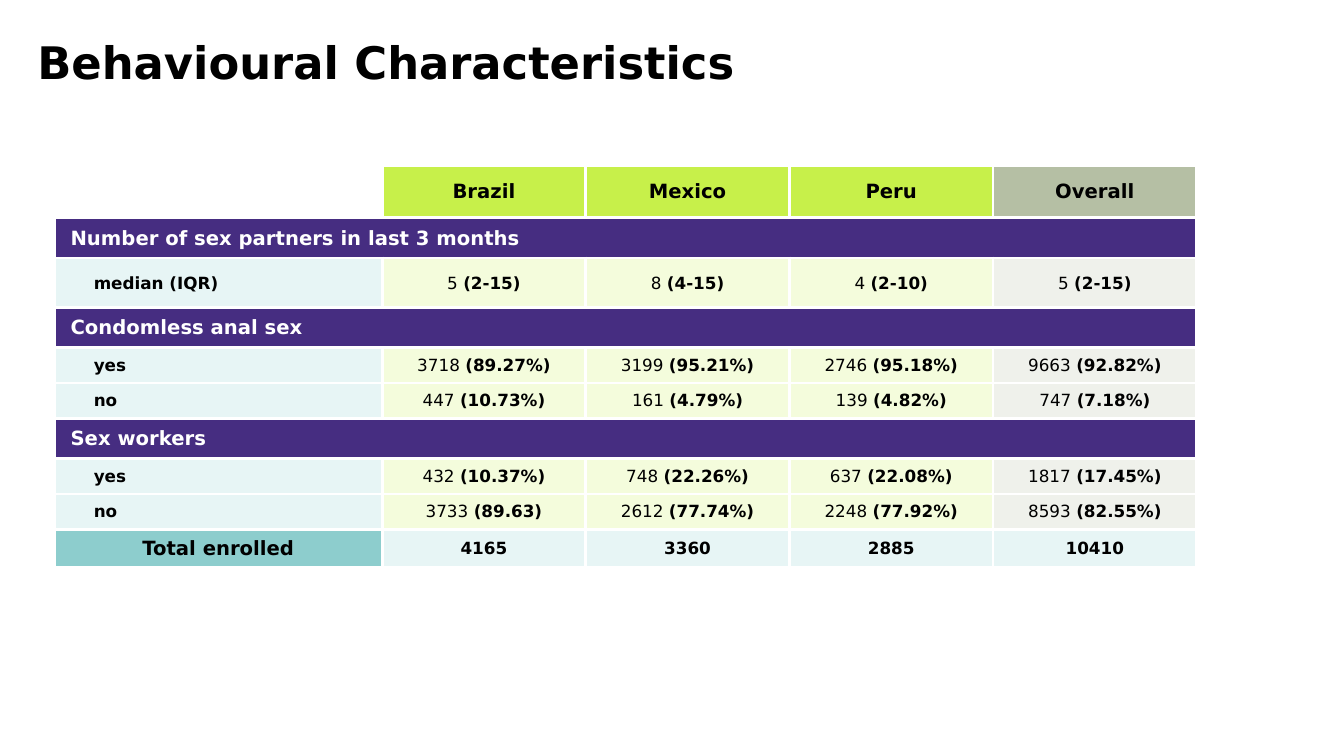
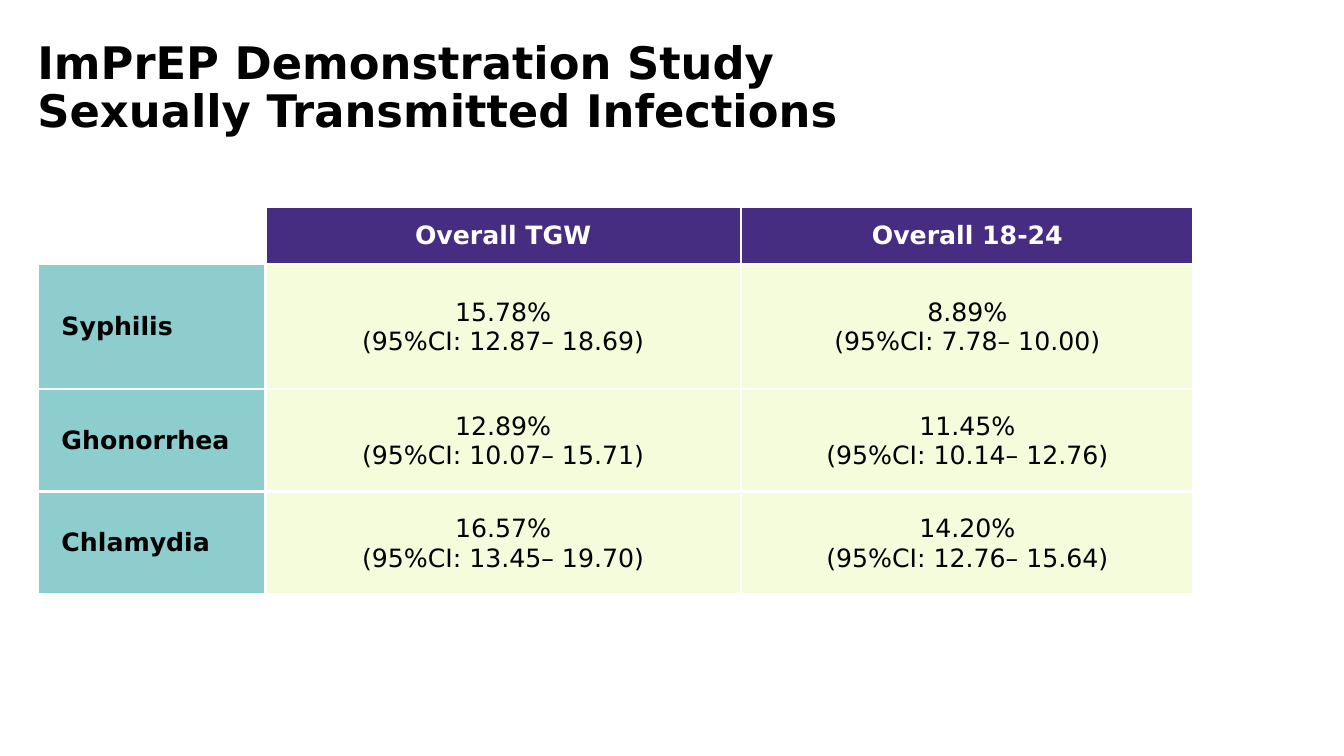
from pptx import Presentation
from pptx.dml.color import RGBColor
from pptx.enum.text import MSO_ANCHOR as Anchor, MSO_AUTO_SIZE as AutoSize, PP_ALIGN as Align
from pptx.oxml import parse_xml
from pptx.oxml.ns import nsdecls
from pptx.util import Inches, Pt

FONT = "DejaVu Sans"
BLACK = RGBColor(0x00, 0x00, 0x00)
WHITE = RGBColor(0xFF, 0xFF, 0xFF)
PURPLE = RGBColor(0x46, 0x2D, 0x81)
LIME = RGBColor(0xC7, 0xF0, 0x4A)
SAGE = RGBColor(0xB5, 0xBF, 0xA4)
TEAL = RGBColor(0x8D, 0xCD, 0xCD)
PALE_TEAL = RGBColor(0xE7, 0xF5, 0xF5)
PALE_LIME = RGBColor(0xF4, 0xFC, 0xDC)
PALE_SAGE = RGBColor(0xEF, 0xF1, 0xEB)

TIGHT = (0.01, 0.01, 0.01, 0)
ROOMY = (0.1, 0.05, 0.1, 0.05)
TITLE_ONLY = 5

COUNTRIES = ["Brazil", "Mexico", "Peru", "Overall"]
BEHAVIOURS = [
    (0.4, "Number of sex partners in last 3 months", []),
    (0.49, "median (IQR)", ["5 (2-15)", "8 (4-15)", "4 (2-10)", "5 (2-15)"]),
    (0.4, "Condomless anal sex", []),
    (0.35, "yes", ["3718 (89.27%)", "3199 (95.21%)", "2746 (95.18%)", "9663 (92.82%)"]),
    (0.35, "no", ["447 (10.73%)", "161 (4.79%)", "139 (4.82%)", "747 (7.18%)"]),
    (0.4, "Sex workers", []),
    (0.35, "yes", ["432 (10.37%)", "748 (22.26%)", "637 (22.08%)", "1817 (17.45%)"]),
    (0.35, "no", ["3733 (89.63)", "2612 (77.74%)", "2248 (77.92%)", "8593 (82.55%)"]),
]
TOTALS = ["4165", "3360", "2885", "10410"]

GROUPS = ["Overall TGW", "Overall 18-24"]
INFECTIONS = [
    (1.24, "Syphilis", [("15.78%", "12.87– 18.69"), ("8.89%", "7.78– 10.00")]),
    (1.02, "Ghonorrhea", [("12.89%", "10.07– 15.71"), ("11.45%", "10.14– 12.76")]),
    (1.02, "Chlamydia", [("16.57%", "13.45– 19.70"), ("14.20%", "12.76– 15.64")]),
]


def add_span(para, text, size=12, color=BLACK, bold=True):
    span = para.add_run()
    span.text = text
    span.font.name = FONT
    span.font.size = Pt(size)
    span.font.color.rgb = color
    span.font.bold = bold


class Deck:
    def __init__(self):
        self.deck = Presentation()
        self.deck.slide_width = Inches(13.33)
        self.deck.slide_height = Inches(7.5)
        self.page = None

    def add_page(self, *title_lines):
        self.page = self.deck.slides.add_slide(self.deck.slide_layouts[TITLE_ONLY])
        title = self.page.shapes.title
        title.left, title.top = Inches(0.37), Inches(0.4)
        title.width, title.height = Inches(11.13), Inches(0.92)
        frame = title.text_frame
        frame.margin_left = frame.margin_top = frame.margin_right = frame.margin_bottom = 0
        frame.vertical_anchor = Anchor.TOP
        frame.auto_size = AutoSize.NONE
        frame.word_wrap = True
        para = frame.paragraphs[0]
        para.alignment = Align.LEFT
        para.line_spacing = 0.9
        for number, line in enumerate(title_lines):
            if number:
                para.add_line_break()
            add_span(para, line, size=32)

    def add_table(self, left, top, widths, heights):
        frame = self.page.shapes.add_table(
            len(heights), len(widths), Inches(left), Inches(top),
            Inches(sum(widths)), Inches(sum(heights)))
        table = frame.table
        table.first_row = table.horz_banding = False
        for column, width in zip(table.columns, widths):
            column.width = Inches(width)
        for row, height in zip(table.rows, heights):
            row.height = Inches(height)
        for cell in table.iter_cells():
            self.add_borders(cell)
            cell.fill.background()
        return table

    def add_borders(self, cell):
        properties = cell._tc.get_or_add_tcPr()
        for side in ("lnL", "lnR", "lnT", "lnB"):
            properties.append(parse_xml(
                f'<a:{side} {nsdecls("a")} w="{Pt(2.25)}"><a:solidFill>'
                f'<a:srgbClr val="{WHITE}"/></a:solidFill></a:{side}>'))

    def fill_cell(self, cell, lines, fill, margins=TIGHT, align=Align.CENTER, **style):
        cell.fill.solid()
        cell.fill.fore_color.rgb = fill
        cell.vertical_anchor = Anchor.MIDDLE
        (cell.margin_left, cell.margin_top,
         cell.margin_right, cell.margin_bottom) = map(Inches, margins)
        frame = cell.text_frame
        for number, line in enumerate(lines):
            para = frame.add_paragraph() if number else frame.paragraphs[0]
            para.alignment = align
            add_span(para, line, **style)

    def fill_count(self, cell, text, fill):
        count, share = text.split(" ")
        self.fill_cell(cell, [count + " "], fill, bold=False)
        add_span(cell.text_frame.paragraphs[0], share)

    def save(self):
        self.deck.save("out.pptx")


def add_behaviour_page(deck):
    deck.add_page("Behavioural Characteristics")
    heights = [0.52] + [height for height, _, _ in BEHAVIOURS] + [0.38]
    table = deck.add_table(0.54, 1.64, [3.25] + [2.02] * 4, heights)
    head_fills = [LIME] * 3 + [SAGE]
    count_fills = [PALE_LIME] * 3 + [PALE_SAGE]
    for column, (country, fill) in enumerate(zip(COUNTRIES, head_fills), 1):
        deck.fill_cell(table.cell(0, column), [country], fill, (0.1, 0.12, 0.1, 0.12), size=14)
    for row, (_, label, counts) in enumerate(BEHAVIOURS, 1):
        head = table.cell(row, 0)
        if counts:
            deck.fill_cell(head, [label], PALE_TEAL, (0.39, 0.01, 0.01, 0), Align.LEFT)
        else:
            head.merge(table.cell(row, len(COUNTRIES)))
            deck.fill_cell(head, [label], PURPLE, (0.16, 0.01, 0.01, 0), Align.LEFT,
                           size=14, color=WHITE)
        for column, (count, fill) in enumerate(zip(counts, count_fills), 1):
            deck.fill_count(table.cell(row, column), count, fill)
    last = len(heights) - 1
    deck.fill_cell(table.cell(last, 0), ["Total enrolled"], TEAL, (0, 0, 0, 0), size=14)
    for column, total in enumerate(TOTALS, 1):
        deck.fill_cell(table.cell(last, column), [total], PALE_TEAL)


def add_infection_page(deck):
    deck.add_page("ImPrEP Demonstration Study", "Sexually Transmitted Infections")
    heights = [0.57] + [height for height, _, _ in INFECTIONS]
    table = deck.add_table(0.37, 2.05, [2.26, 4.72, 4.49], heights)
    for column, group in enumerate(GROUPS, 1):
        deck.fill_cell(table.cell(0, column), [group], PURPLE, ROOMY, size=18, color=WHITE)
    for row, (_, infection, rates) in enumerate(INFECTIONS, 1):
        deck.fill_cell(table.cell(row, 0), [infection], TEAL, (0.24, 0.05, 0.1, 0.05),
                       Align.LEFT, size=18)
        for column, (rate, interval) in enumerate(rates, 1):
            deck.fill_cell(table.cell(row, column), [rate, f"(95%CI: {interval})"],
                           PALE_LIME, size=18, bold=False)


def main():
    deck = Deck()
    add_behaviour_page(deck)
    add_infection_page(deck)
    deck.save()


if __name__ == "__main__":
    main()
